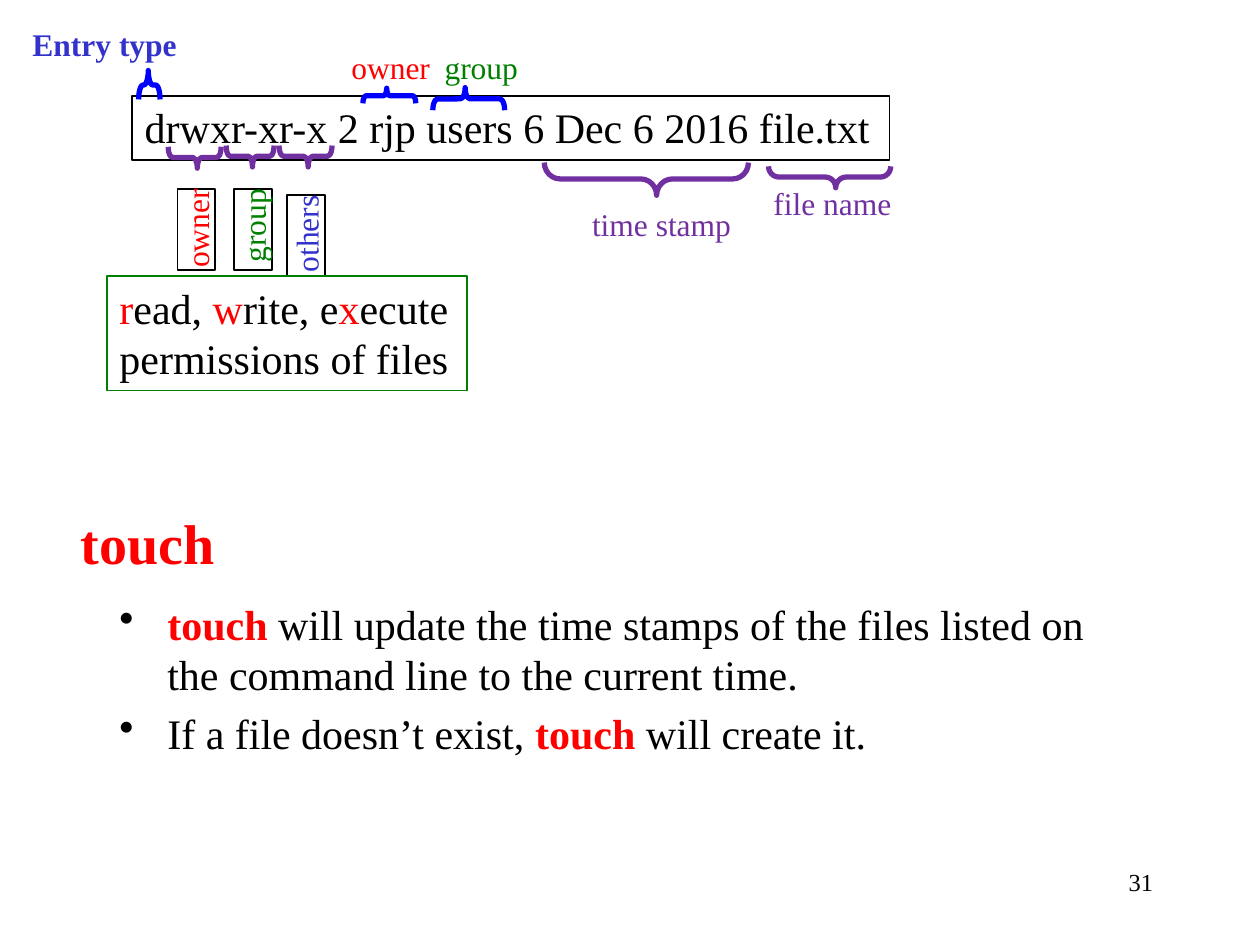
"""Build the slide on directory entry fields and the touch command."""
from lxml import etree
from pptx import Presentation
from pptx.dml.color import RGBColor
from pptx.enum.shapes import MSO_SHAPE
from pptx.enum.text import MSO_ANCHOR, PP_ALIGN
from pptx.oxml.ns import qn
from pptx.util import Inches, Pt

BLACK = RGBColor(0x00, 0x00, 0x00)
RED = RGBColor(0xFF, 0x00, 0x00)
GREEN = RGBColor(0x00, 0x80, 0x00)
INDIGO = RGBColor(0x33, 0x33, 0xCC)
BLUE = RGBColor(0x00, 0x00, 0xFF)
PURPLE = RGBColor(0x70, 0x30, 0xA0)
RECTANGLE, LEFT_BRACE = MSO_SHAPE.RECTANGLE, MSO_SHAPE.LEFT_BRACE
TOP = MSO_ANCHOR.TOP
LEFT, RIGHT = PP_ALIGN.LEFT, PP_ALIGN.RIGHT
UP, DOWN = 90, 270


class SlideBuilder:
    """Hold the text style and the current slide."""

    font_name = "Times New Roman"

    def __init__(self, page):
        self.page = page

    def outline(self, shape, color, width):
        shape.shadow.inherit = False
        shape.fill.background()
        shape.line.color.rgb = color
        shape.line.width = Pt(width)

    def add_spans(self, para, spans, size, align=LEFT):
        para.alignment = align
        for text, color, bold in spans:
            span = para.add_run()
            span.text = text
            formats = {"name": self.font_name, "size": Pt(size), "bold": bold}
            for key, value in formats.items():
                setattr(span.font, key, value)
            span.font.color.rgb = color

    def text(self, place, spans, size=18, align=LEFT, wrap=True, line=None):
        area = [Inches(value) for value in place]
        if line is None:
            box = self.page.shapes.add_textbox(*area)
        else:
            box = self.page.shapes.add_shape(RECTANGLE, *area)
            self.outline(box, line, 1)
        box.text_frame.word_wrap = wrap
        box.text_frame.vertical_anchor = TOP
        self.add_spans(box.text_frame.paragraphs[0], spans, size, align)
        return box

    def side_label(self, place, text, color):
        box = self.text(place, [(text, color, False)], align=RIGHT, line=BLACK)
        box.rotation = DOWN
        for side in ("left", "top", "right", "bottom"):
            setattr(box.text_frame, f"margin_{side}", 0)

    def brace(self, place, direction, color, curve):
        shape = self.page.shapes.add_shape(LEFT_BRACE, *[Inches(value) for value in place])
        self.outline(shape, color, 3)
        shape.rotation = direction
        shape.adjustments[0] = curve
        shape.adjustments[1] = 0.55

    def bullets(self, place, items, size):
        box = self.page.shapes.add_textbox(*[Inches(value) for value in place])
        frame = box.text_frame
        frame.word_wrap = True
        for index, spans in enumerate(items):
            para = frame.add_paragraph() if index else frame.paragraphs[0]
            self.add_spans(para, spans, size)
            para.space_before = Pt(size * 0.2)
            properties = para._p.get_or_add_pPr()
            properties.set("marL", str(Inches(0.38)))
            properties.set("indent", str(-Inches(0.38)))
            tint = etree.SubElement(properties, qn("a:buClr"))
            etree.SubElement(tint, qn("a:srgbClr"), val=str(BLACK))
            etree.SubElement(properties, qn("a:buChar"), char="•")


def main():
    deck = Presentation()
    deck.slide_width, deck.slide_height = Inches(10), Inches(7.5)
    builder = SlideBuilder(deck.slides.add_slide(deck.slide_layouts[6]))

    builder.text((7.17, 6.83, 2.08, 0.5), [("31", BLACK, False)], 14, RIGHT)
    builder.bullets((0.85, 4.7, 8.07, 2.04), [
        [("touch", RED, True),
         (" will update the time stamps of the files listed on the command line"
          " to the current time.", BLACK, False)],
        [("If a file doesn’t exist, ", BLACK, False), ("touch ", RED, True),
         ("will create it.", BLACK, False)],
    ], 24)
    builder.text((0.54, 3.99, 1.27, 0.64), [("touch", RED, True)], 32, wrap=False)

    entry = "drwxr-xr-x 2 rjp users 6 Dec 6 2016 file.txt"
    builder.text((1.05, 0.76, 6.01, 0.51), [(entry, BLACK, False)], 24,
                 wrap=False, line=BLACK)

    for place, direction, color, curve in [
        ((1.46, 1.04, 0.17, 0.42), DOWN, PURPLE, 0.208),
        ((1.9, 1.05, 0.17, 0.38), DOWN, PURPLE, 0.188),
        ((2.34, 1.03, 0.17, 0.42), DOWN, PURPLE, 0.208),
        ((6.5, 0.92, 0.17, 0.97), DOWN, PURPLE, 0.483),
        ((5, 0.61, 0.26, 1.62), DOWN, PURPLE, 0.483),
        ((3.03, 0.55, 0.12, 0.42), UP, BLUE, 0.208),
        ((3.63, 0.5, 0.18, 0.57), UP, BLUE, 0.208),
        ((1.07, 0.59, 0.23, 0.17), UP, BLUE, 0.208),
    ]:
        builder.brace(place, direction, color, curve)

    for left, top, text, color in [
        (1.24, 1.67, "owner", RED),
        (1.69, 1.67, "group", GREEN),
        (2.11, 1.72, "others", INDIGO),
    ]:
        builder.side_label((left, top, 0.64, 0.3), text, color)

    permissions = [("r", RED, False), ("ead, ", BLACK, False), ("w", RED, False),
                   ("rite, e", BLACK, False), ("x", RED, False),
                   ("ecute permissions of files", BLACK, False)]
    builder.text((0.85, 2.19, 2.86, 0.91), permissions, 24, line=GREEN)

    for left, top, width, text, color, bold in [
        (6.04, 1.41, 1.14, "file name", PURPLE, False),
        (4.6, 1.58, 1.32, "time stamp", PURPLE, False),
        (2.69, 0.33, 0.89, "owner", RED, False),
        (3.43, 0.33, 0.89, "group", GREEN, False),
        (0.16, 0.15, 1.54, "Entry type", INDIGO, True),
    ]:
        builder.text((left, top, width, 0.4), [(text, color, bold)], wrap=False)

    deck.save("out.pptx")


if __name__ == "__main__":
    main()
